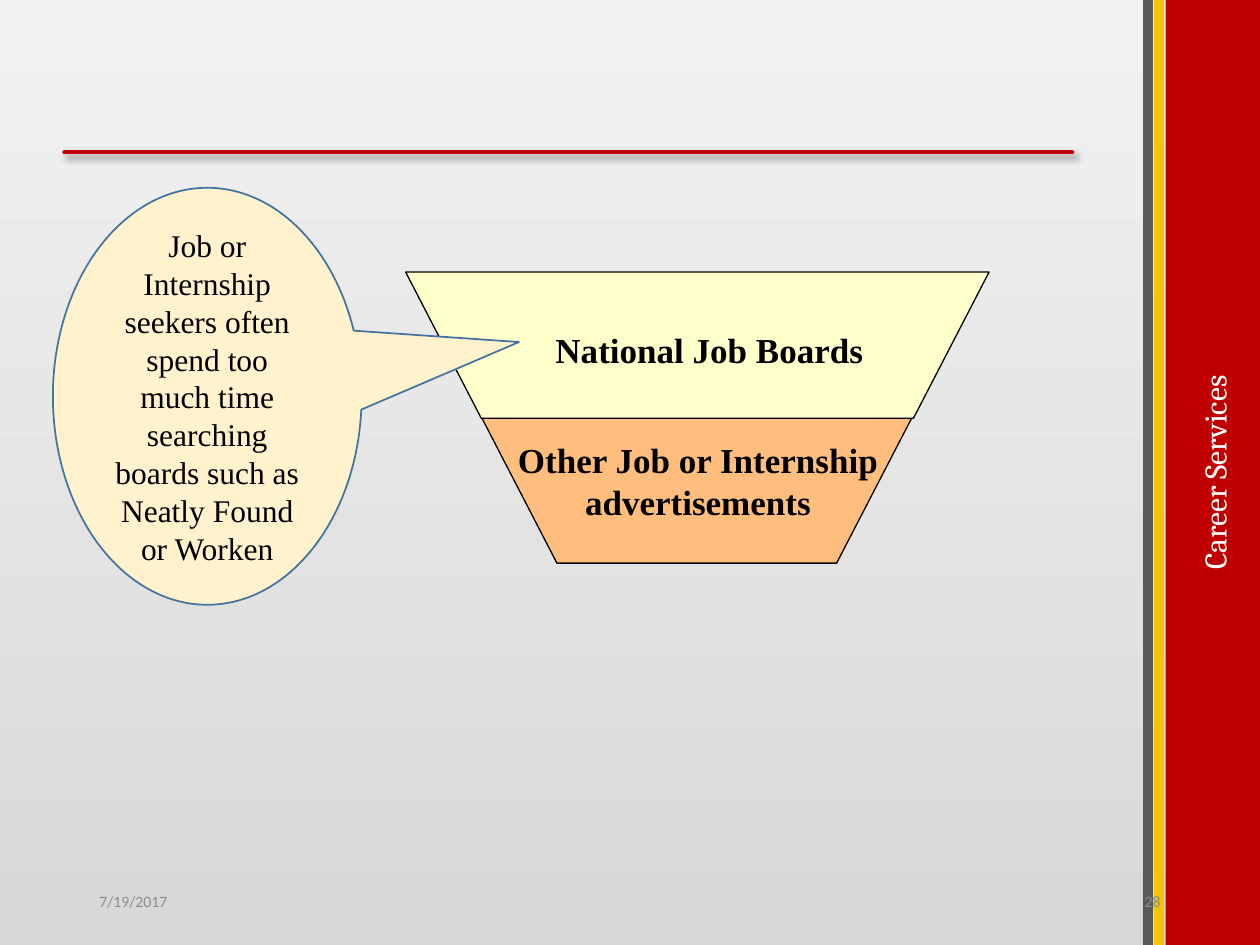
from lxml import etree
from pptx import Presentation
from pptx.dml.color import RGBColor
from pptx.enum import shapes, text
from pptx.oxml import parse_xml
from pptx.oxml.ns import nsdecls, qn
from pptx.util import Inches, Pt

SERIF = "Times New Roman"
CENTER = text.PP_ALIGN.CENTER
MIDDLE = text.MSO_ANCHOR.MIDDLE


def color(value):
    """Turn a hex string into a colour."""
    return RGBColor.from_string(value)


def set_outline(shape, value, width):
    """Give a shape or connector a solid line."""
    shape.line.color.rgb = color(value)
    shape.line.width = Pt(width)


def add_text(shape, words, size, font, value, bold=False, align=CENTER, anchor=MIDDLE):
    """Write one formatted paragraph in a shape."""
    frame = shape.text_frame
    for name, setting in {"word_wrap": True, "vertical_anchor": anchor}.items():
        setattr(frame, name, setting)
    paragraph = frame.paragraphs[0]
    paragraph.alignment = align
    run = paragraph.add_run()
    run.text = words
    for name, setting in {"size": Pt(size), "name": font, "bold": bold}.items():
        setattr(run.font, name, setting)
    run.font.color.rgb = color(value)


def add_label(slide, box, words, size, font, value, **layout):
    """Add a text box."""
    label = slide.shapes.add_textbox(*map(Inches, box))
    add_text(label, words, size, font, value, **layout)
    return label


def add_preset(slide, kind, box, fill=None):
    """Add a preset shape without line or shadow."""
    shape = slide.shapes.add_shape(kind, *map(Inches, box))
    shape.shadow.inherit = False
    shape.line.fill.background()
    if fill:
        shape.fill.solid()
        shape.fill.fore_color.rgb = color(fill)
    return shape


def add_backdrop(slide):
    """Add the grey gradient panel, darker at the bottom."""
    panel = add_preset(slide, shapes.MSO_SHAPE.RECTANGLE, (0, 0, 9.43, 7.5))
    panel.fill.gradient()
    panel.fill.gradient_angle = 90
    for stop, value in zip(panel.fill.gradient_stops, ("D8D8D8", "F2F2F2")):
        stop.color.rgb = color(value)


def add_line(slide, start, end, value, width):
    """Add a straight line with an empty effect list, and return that list."""
    points = map(Inches, (*start, *end))
    line = slide.shapes.add_connector(shapes.MSO_CONNECTOR.STRAIGHT, *points)
    set_outline(line, value, width)
    return etree.SubElement(line._element.spPr, qn("a:effectLst"))


def add_title_rule(slide):
    """Add the red rule with its soft shadow and round ends."""
    effects = add_line(slide, (0.51, 1.21), (8.51, 1.21), "C00000", 2.25)
    effects.getparent().find(qn("a:ln")).set("cap", "rnd")
    effects.append(parse_xml(
        f'<a:outerShdw {nsdecls("a")} blurRad="{Pt(4)}" dist="{Pt(3)}" dir="2700000" '
        'algn="tl" rotWithShape="0"><a:srgbClr val="000000">'
        '<a:alpha val="40000"/></a:srgbClr></a:outerShdw>'))


def add_funnel_band(slide, left, top, width, height, inset, fill):
    """Add a funnel band that narrows by the inset on each side."""
    right, bottom = left + width, top + height
    corners = [(right, top), (right - inset, bottom), (left + inset, bottom)]
    builder = slide.shapes.build_freeform(Inches(left), Inches(top))
    builder.add_line_segments([(Inches(x), Inches(y)) for x, y in corners])
    band = builder.convert_to_shape()
    band.shadow.inherit = False
    band.fill.solid()
    band.fill.fore_color.rgb = color(fill)
    set_outline(band, "000000", 0.75)


def add_callout(slide, box, tip, words):
    """Add the speech balloon with its pointer."""
    balloon = add_preset(slide, shapes.MSO_SHAPE.OVAL_CALLOUT, box, "FFF2CC")
    set_outline(balloon, "43739E", 1)
    for index, value in enumerate(tip):
        balloon.adjustments[index] = value
    add_text(balloon, words, 18, SERIF, "000000")


def main():
    """Build the slide and save it."""
    presentation = Presentation()
    presentation.slide_width, presentation.slide_height = Inches(10), Inches(7.5)
    slide = presentation.slides.add_slide(presentation.slide_layouts[6])
    slide.background.fill.solid()
    slide.background.fill.fore_color.rgb = color("F2F2F2")

    add_backdrop(slide)
    add_title_rule(slide)
    add_preset(slide, shapes.MSO_SHAPE.RECTANGLE, (9.25, 0, 0.75, 7.5), "C00000")
    banner = add_label(slide, (7.66, 3.55, 3.95, 0.4), "Career Services", 18,
                       "Cambria", "FFFFFF", anchor=text.MSO_ANCHOR.TOP)
    banner.rotation = 270
    for x, value in ((9.2, "F5C400"), (9.11, "58595B")):
        add_line(slide, (x, 0), (x, 7.5), value, 6)

    add_funnel_band(slide, 3.82, 3.31, 3.42, 1.16, 0.6, "FFBE7D")
    add_funnel_band(slide, 3.22, 2.16, 4.63, 1.16, 0.6, "FFFFCC")
    for box, words in (
        ((3.75, 3.43, 3.58, 0.77), "Other Job or Internship advertisements"),
        ((3.84, 2.56, 3.58, 0.44), "National Job Boards"),
    ):
        add_label(slide, box, words, 20, SERIF, "000000", bold=True,
                  anchor=text.MSO_ANCHOR.TOP)
    add_callout(slide, (0.42, 1.49, 2.45, 3.31), (1.01, -0.13),
                "Job or Internship seekers often spend too much time searching "
                "boards such as Neatly Found or Worken")

    for left, words, align in ((0.69, "7/19/2017", text.PP_ALIGN.LEFT),
                               (7.06, "28", text.PP_ALIGN.RIGHT)):
        add_label(slide, (left, 6.95, 2.25, 0.4), words, 9, "Calibri", "8C8C8C",
                  align=align)
    presentation.save("out.pptx")


if __name__ == "__main__":
    main()
